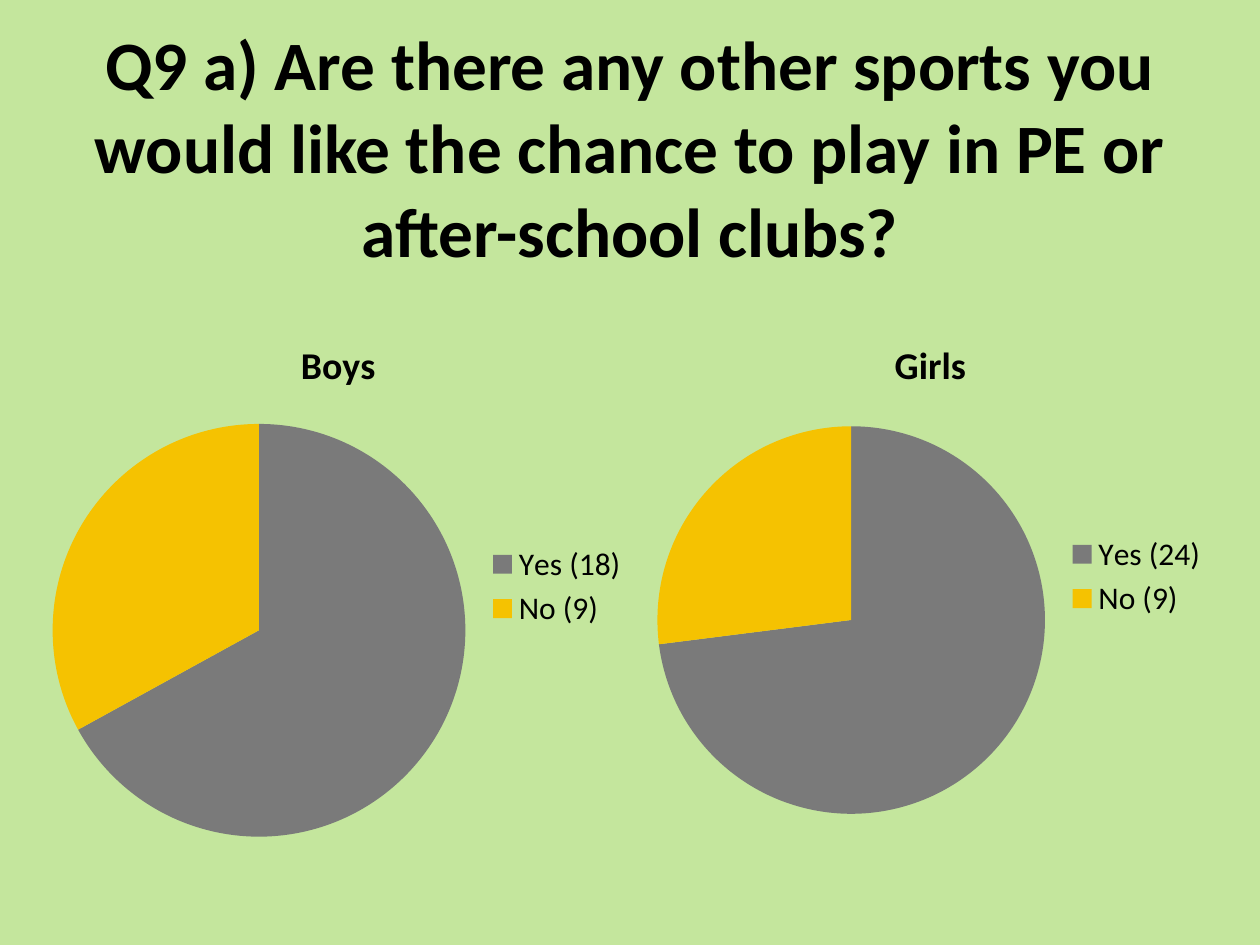
from pptx import Presentation
from pptx.chart.data import CategoryChartData
from pptx.dml.color import RGBColor
from pptx.enum.chart import XL_CHART_TYPE, XL_LEGEND_POSITION
from pptx.enum.text import MSO_ANCHOR, MSO_AUTO_SIZE, PP_ALIGN
from pptx.util import Pt


def rgb(value):
    return RGBColor.from_string(value)


def set_font(font, size, bold):
    for name, value in {"name": "Calibri", "size": Pt(size), "bold": bold}.items():
        setattr(font, name, value)
    font.color.rgb = rgb("000000")


prs = Presentation()
prs.slide_width, prs.slide_height = Pt(720), Pt(540)
s = prs.slides.add_slide(prs.slide_layouts[5])
s.background.fill.solid()
s.background.fill.fore_color.rgb = rgb("C4E69D")

title = s.shapes.title
box = {"left": 36, "top": 21.6, "width": 648, "height": 123.84}
for name, value in box.items():
    setattr(title, name, Pt(value))
tf = title.text_frame
frame_format = {
    "word_wrap": True,
    "auto_size": MSO_AUTO_SIZE.NONE,
    "vertical_anchor": MSO_ANCHOR.MIDDLE,
}
for name, value in frame_format.items():
    setattr(tf, name, value)
p = tf.paragraphs[0]
p.alignment = PP_ALIGN.CENTER
r = p.add_run()
r.text = "Q9 a) Are there any other sports you would like the chance to play in PE or after-school clubs?"
set_font(r.font, 39.6, True)

pies = [
    ("Boys", ("Yes (18)", "No (9)"), (67, 33), (20.16, 179.28, 346.32, 311.76)),
    ("Girls", ("Yes (24)", "No (9)"), (73, 27), (365.76, 179.28, 331.92, 300.24)),
]
for group, answers, shares, place in pies:
    data = CategoryChartData()
    data.categories = answers
    data.add_series(group, shares)
    chart = s.shapes.add_chart(XL_CHART_TYPE.PIE, *map(Pt, place), data).chart
    set_font(chart.font, 18, False)

    chart.has_title = True
    chart.chart_title.include_in_layout = False
    r = chart.chart_title.text_frame.paragraphs[0].add_run()
    r.text = group
    set_font(r.font, 21.6, True)

    chart.has_legend = True
    chart.legend.position = XL_LEGEND_POSITION.RIGHT
    chart.legend.include_in_layout = False
    set_font(chart.legend.font, 18, False)

    plot = chart.plots[0]
    plot.vary_by_categories = True
    for i, color in enumerate(("7A7A7A", "F5C201")):
        fill = plot.series[0].points[i].format.fill
        fill.solid()
        fill.fore_color.rgb = rgb(color)

prs.save("out.pptx")
